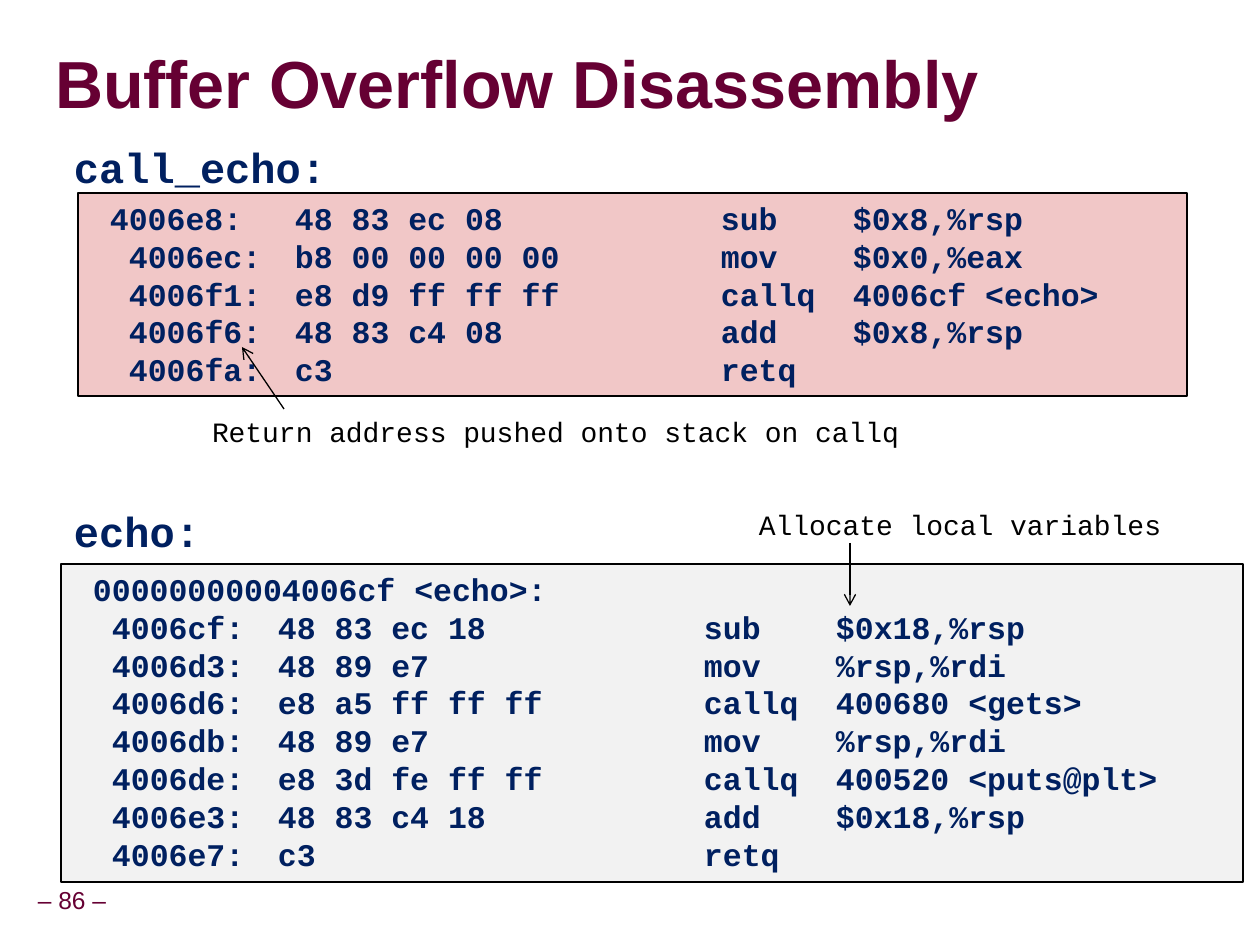
from dataclasses import dataclass

import pptx
import pptx.dml.color
import pptx.enum.shapes
import pptx.enum.text
import pptx.oxml.ns
import pptx.util
from lxml import etree

EMU_PER_PX = 914400 / 126
ALIGN = pptx.enum.text.PP_ALIGN
ANCHOR = pptx.enum.text.MSO_ANCHOR


@dataclass(frozen=True)
class Theme:
    sans: str = "Arial"
    mono: str = "Courier New"
    maroon: str = "660033"
    navy: str = "002060"
    black: str = "000000"
    pink: str = "F1C7C7"
    grey: str = "F2F2F2"
    title: int = 38
    label: int = 24
    code: int = 18
    note: int = 16
    footer: int = 14


@dataclass(frozen=True)
class Area:
    left: int
    top: int
    width: int
    height: int


@dataclass(frozen=True)
class Listing:
    label: str
    label_area: Area
    area: Area
    fill: str
    lines: tuple[str, ...]


@dataclass(frozen=True)
class Note:
    text: str
    area: Area
    start: tuple[int, int]
    end: tuple[int, int]


THEME = Theme()

# Two small indents, then the columns for bytes, mnemonic and operands.
CODE_TABS = (19, 38, 204, 630, 762)

LISTINGS = (
    Listing(
        "call_echo:", Area(61, 136, 280, 63), Area(78, 193, 1109, 203), THEME.pink,
        (
            "\t4006e8:\t48 83 ec 08\tsub\t$0x8,%rsp",
            "\t\t4006ec:\tb8 00 00 00 00\tmov\t$0x0,%eax",
            "\t\t4006f1:\te8 d9 ff ff ff\tcallq\t4006cf <echo>",
            "\t\t4006f6:\t48 83 c4 08\tadd\t$0x8,%rsp",
            "\t\t4006fa:\tc3\tretq",
        ),
    ),
    Listing(
        "echo:", Area(61, 500, 152, 63), Area(61, 564, 1182, 318), THEME.grey,
        (
            "\t00000000004006cf <echo>:",
            "\t\t4006cf:\t48 83 ec 18\tsub\t$0x18,%rsp",
            "\t\t4006d3:\t48 89 e7\tmov\t%rsp,%rdi",
            "\t\t4006d6:\te8 a5 ff ff ff\tcallq\t400680 <gets>",
            "\t\t4006db:\t48 89 e7\tmov\t%rsp,%rdi",
            "\t\t4006de:\te8 3d fe ff ff\tcallq\t400520 <puts@plt>",
            "\t\t4006e3:\t48 83 c4 18\tadd\t$0x18,%rsp",
            "\t\t4006e7:\tc3\tretq",
        ),
    ),
)

NOTES = (
    Note("Return address pushed onto stack on callq",
         Area(199, 409, 723, 47), (284, 409), (242, 347)),
    Note("Allocate local variables",
         Area(746, 501, 433, 47), (850, 543), (850, 606)),
)


def px(length: int) -> pptx.util.Emu:
    return pptx.util.Emu(round(length * EMU_PER_PX))


def rgb(color: str) -> pptx.dml.color.RGBColor:
    return pptx.dml.color.RGBColor.from_string(color)


def bounds(area: Area) -> tuple[pptx.util.Emu, ...]:
    return px(area.left), px(area.top), px(area.width), px(area.height)


def write_text(shape, *lines: str, size: int, color: str, font: str = THEME.mono,
               bold: bool = False, align=ALIGN.LEFT, anchor=ANCHOR.TOP,
               spacing: float | None = None, wrap: bool = False,
               inset: tuple[int, int] = (13, 6), tabs: tuple[int, ...] = ()) -> None:
    """Fill a shape with one paragraph per line, all in the same format."""
    frame = shape.text_frame
    frame.auto_size = pptx.enum.text.MSO_AUTO_SIZE.NONE
    frame.word_wrap = wrap
    frame.vertical_anchor = anchor
    frame.margin_left = frame.margin_right = px(inset[0])
    frame.margin_top = frame.margin_bottom = px(inset[1])
    for index, line in enumerate(lines):
        para = frame.add_paragraph() if index else frame.paragraphs[0]
        para.alignment = align
        if spacing:
            para.line_spacing = spacing
        if tabs:
            set_tabs(para, tabs)
        span = para.add_run()
        span.text = line
        span.font.name = font
        span.font.size = pptx.util.Pt(size)
        span.font.bold = bold
        span.font.color.rgb = rgb(color)


def set_tabs(para, tabs: tuple[int, ...]) -> None:
    qn = pptx.oxml.ns.qn
    stops = etree.SubElement(para._p.get_or_add_pPr(), qn("a:tabLst"))
    for tab in tabs:
        etree.SubElement(stops, qn("a:tab"), pos=str(px(tab)), algn="l")


def draw_listing(page, listing: Listing) -> None:
    box = page.shapes.add_shape(
        pptx.enum.shapes.MSO_SHAPE.RECTANGLE, *bounds(listing.area))
    box.shadow.inherit = False
    box.fill.solid()
    box.fill.fore_color.rgb = rgb(listing.fill)
    box.line.color.rgb = rgb(THEME.black)
    box.line.width = pptx.util.Pt(1)
    write_text(box, *listing.lines, size=THEME.code, color=THEME.navy,
               bold=True, wrap=True, tabs=CODE_TABS)
    label = page.shapes.add_textbox(*bounds(listing.label_area))
    write_text(label, listing.label, size=THEME.label, color=THEME.navy, bold=True)


def draw_note(page, note: Note) -> None:
    qn = pptx.oxml.ns.qn
    arrow = page.shapes.add_connector(
        pptx.enum.shapes.MSO_CONNECTOR.STRAIGHT,
        *(px(value) for value in note.start + note.end))
    arrow.line.color.rgb = rgb(THEME.black)
    arrow.line.width = pptx.util.Pt(0.75)
    etree.SubElement(arrow.line._get_or_add_ln(), qn("a:tailEnd"), type="arrow")
    etree.SubElement(arrow._element.spPr, qn("a:effectLst"))
    box = page.shapes.add_textbox(*bounds(note.area))
    write_text(box, note.text, size=THEME.note, color=THEME.black)


def main() -> None:
    deck = pptx.Presentation()
    deck.slide_width, deck.slide_height = px(1260), px(945)
    page = deck.slides.add_slide(deck.slide_layouts.get_by_name("Title Only"))

    title = page.shapes.title
    title.left, title.top, title.width, title.height = bounds(Area(55, 34, 1201, 107))
    write_text(title, "Buffer Overflow Disassembly", size=THEME.title,
               color=THEME.maroon, font=THEME.sans, bold=True, wrap=True,
               anchor=ANCHOR.MIDDLE, spacing=0.87, inset=(0, 0))

    for listing in LISTINGS:
        draw_listing(page, listing)
    for note in NOTES:
        draw_note(page, note)

    number = page.shapes.add_textbox(*bounds(Area(25, 882, 94, 39)))
    write_text(number, "– 86 –", size=THEME.footer, color=THEME.maroon,
               font=THEME.sans, align=ALIGN.CENTER, anchor=ANCHOR.MIDDLE,
               spacing=0.9, inset=(6, 6))

    deck.save("out.pptx")


if __name__ == "__main__":
    main()
